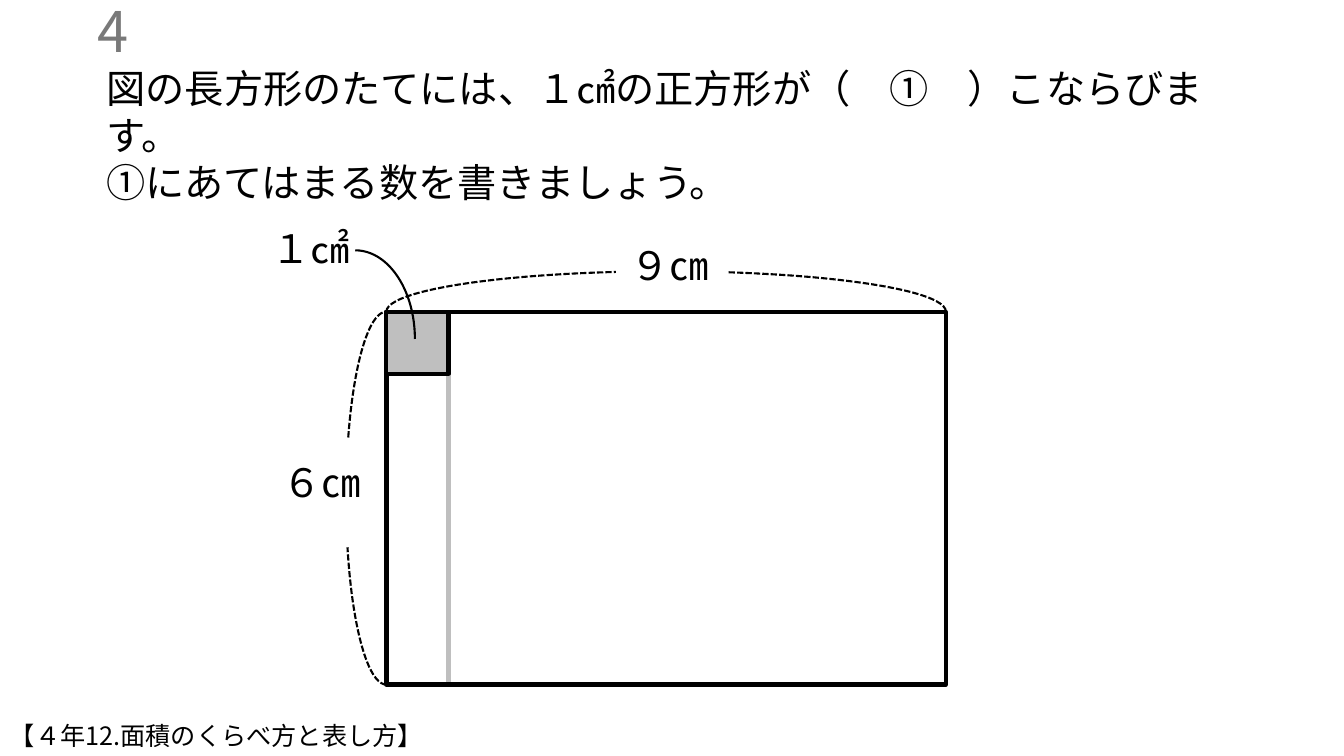
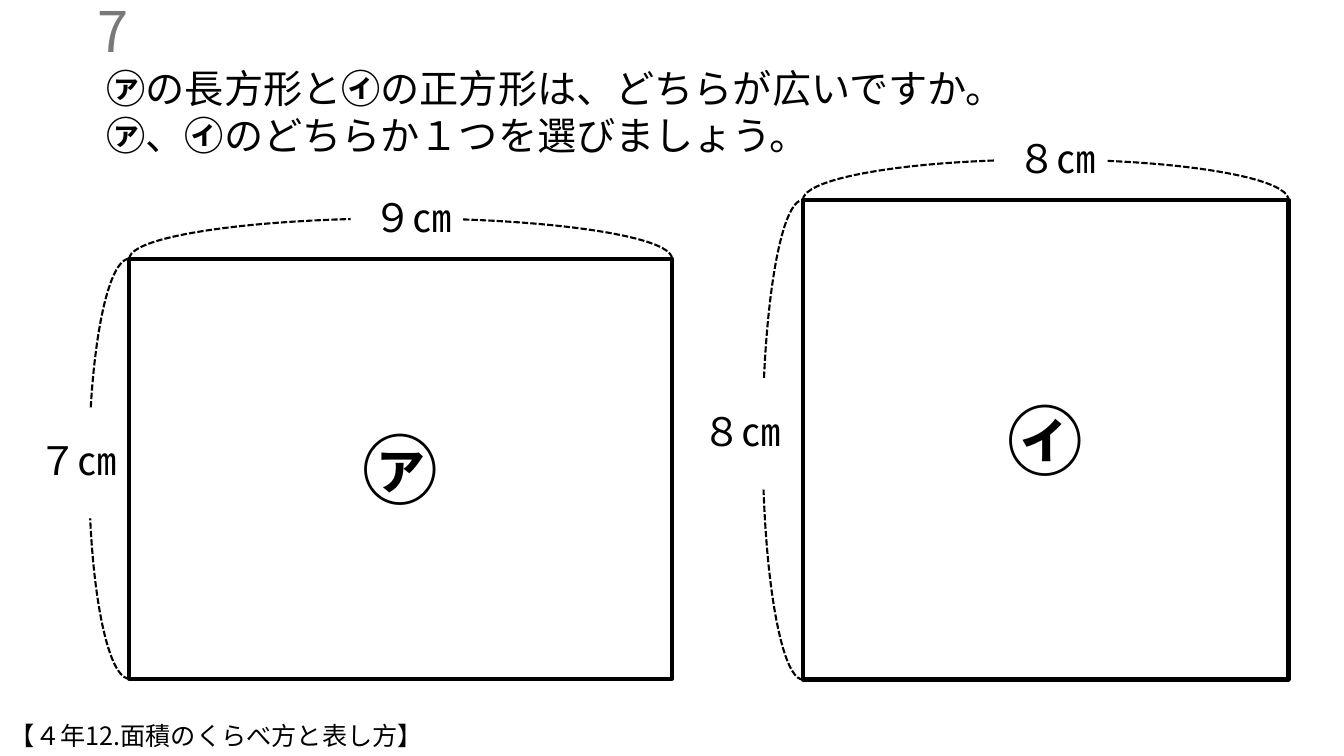
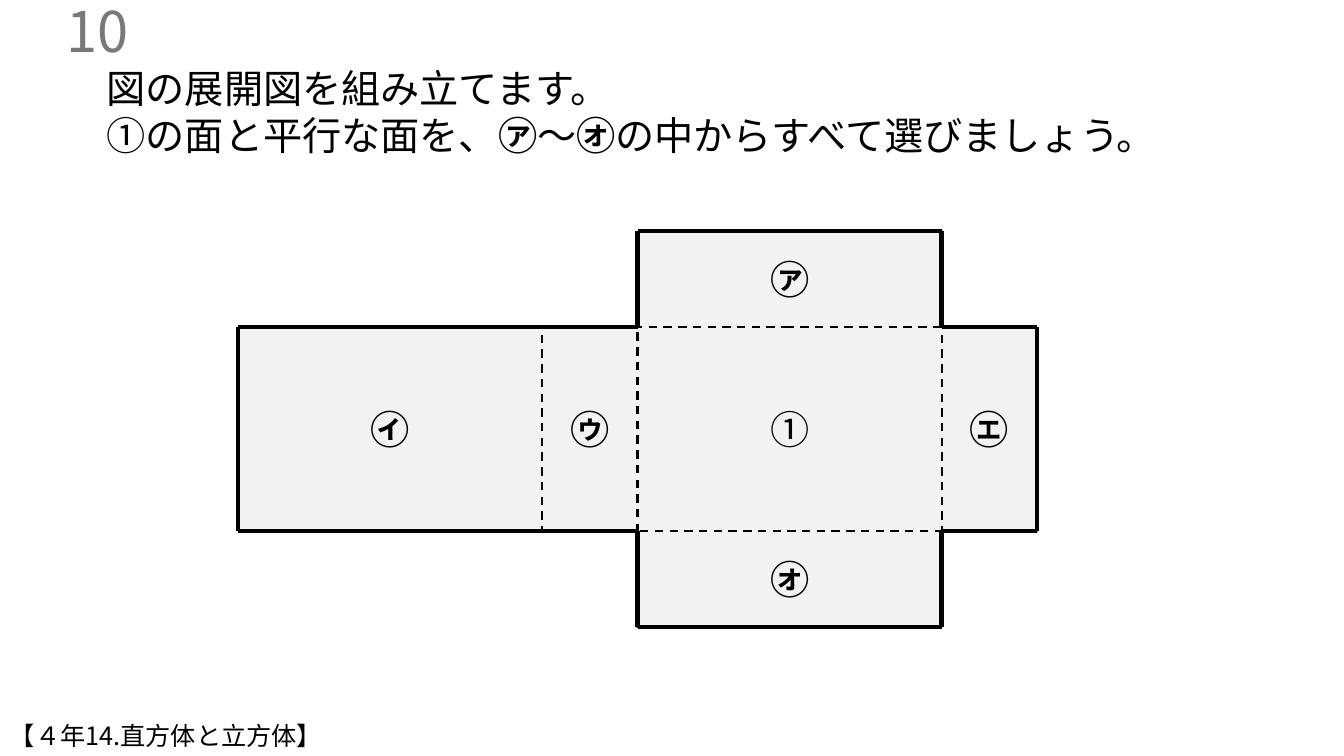
import itertools

import pptx
import pptx.dml.color
import pptx.enum.dml
import pptx.enum.shapes
import pptx.enum.text
import pptx.oxml
import pptx.oxml.ns
import pptx.util

BLACK = pptx.dml.color.RGBColor(0x00, 0x00, 0x00)
NUMBER_GRAY = pptx.dml.color.RGBColor(0x79, 0x79, 0x79)
UNIT_GRAY = pptx.dml.color.RGBColor(0xBF, 0xBF, 0xBF)
FACE_GRAY = pptx.dml.color.RGBColor(0xF2, 0xF2, 0xF2)

FONT = "Noto Sans CJK JP"
BOLD_SIGNS = "㋐㋑㋒㋓㋔"

# Square grid: 80 columns by 45 rows, six cells to the inch
COLUMNS, ROWS = 80, 45
CELL = pptx.util.Inches(7.5) / ROWS

ALIGN = pptx.enum.text.PP_ALIGN
MIDDLE = pptx.enum.text.MSO_ANCHOR.MIDDLE
SHAPE = pptx.enum.shapes.MSO_SHAPE
DASH = pptx.enum.dml.MSO_LINE

BODY = {"size": pptx.util.Pt(28), "name": FONT}
NUMBER = {"size": pptx.util.Pt(40), "name": FONT}
FOOTER = {"size": pptx.util.Pt(18), "name": FONT}
SIGN = {"size": pptx.util.Pt(54), "name": FONT}

THICK = {"width": pptx.util.Pt(3)}
THIN = {"width": pptx.util.Pt(1.5)}
BRACKET = {**THIN, "dash_style": DASH.SQUARE_DOT}
FOLD = {**THIN, "dash_style": DASH.DASH}

# Arc adjustments: the full turn is 216, so half a turn is 108
HALF_TURN = 108
BRACKET_ARCS = ((196.71, 0), (HALF_TURN, 131))
BRACKET_DEPTH = 4.8
LABEL_SIZE = (7.1, 3.4)


def grid(*cells):
    return [round(cell * CELL) for cell in cells]


def apply(target, values):
    for name, value in values.items():
        setattr(target, name, value)


def write(frame, lines, style, color=BLACK, align=ALIGN.LEFT, anchor=None):
    """Fill a text frame; circled kana are set in bold."""
    apply(frame, {"word_wrap": True, "vertical_anchor": anchor})
    for index, line in enumerate(lines):
        paragraph = frame.add_paragraph() if index else frame.paragraphs[0]
        paragraph.alignment = align
        for bold, letters in itertools.groupby(line, lambda sign: sign in BOLD_SIGNS):
            run = paragraph.add_run()
            run.text = "".join(letters)
            apply(run.font, {**style, "bold": bold})
            run.font.color.rgb = color
            # East Asian typeface
            typeface = pptx.oxml.parse_xml(
                f'<a:ea {pptx.oxml.ns.nsdecls("a")} typeface="{FONT}"/>')
            run.font._element.find(pptx.oxml.ns.qn("a:latin")).addnext(typeface)


def text(slide, box, lines, style, **options):
    write(slide.shapes.add_textbox(*grid(*box)).text_frame, lines, style, **options)


def outline(line, values, color=BLACK):
    line.color.rgb = color
    apply(line, values)


def shape(slide, kind, box, line=None, fill=None):
    item = slide.shapes.add_shape(kind, *grid(*box))
    item.shadow.inherit = False
    if fill is None:
        item.fill.background()
    else:
        item.fill.solid()
        item.fill.fore_color.rgb = fill
    if line is None:
        item.line.fill.background()
    else:
        outline(item.line, line)
    return item


def straight(slide, start, end, color=BLACK):
    line = slide.shapes.add_connector(
        pptx.enum.shapes.MSO_CONNECTOR.STRAIGHT, *grid(*start, *end))
    line._element.spPr.append(
        pptx.oxml.parse_xml(f'<a:effectLst {pptx.oxml.ns.nsdecls("a")}/>'))
    outline(line.line, THICK, color)


def question_slide(deck, number, question, unit):
    """Number, question and footer shared by every slide."""
    slide = deck.slides.add_slide(deck.slide_layouts[6])
    text(slide, (0, 0.6, 8.22, 2.4), [number], NUMBER,
         color=NUMBER_GRAY, align=ALIGN.RIGHT, anchor=MIDDLE)
    text(slide, (5.76, 3.54, 68.1, 6.24), question, BODY)
    text(slide, (0, 42.6, 45, 2.4), [unit], FOOTER)
    return slide


def bracket(slide, center, length, rotation=0):
    """Two dashed arcs with a gap for the length."""
    x, y = center
    box = (x - length / 2, y - BRACKET_DEPTH / 2, length, BRACKET_DEPTH)
    for start, end in BRACKET_ARCS:
        arc = shape(slide, SHAPE.ARC, box, BRACKET)
        arc.rotation = rotation
        arc.adjustments[0], arc.adjustments[1] = start, end


def measured_rectangle(slide, box, across, down, sign=""):
    """Rectangle with bracketed lengths above it and on its left.

    Each length is its text and the label's offset from the middle of the side.
    """
    x, y, width, height = box
    rectangle = shape(slide, SHAPE.RECTANGLE, box, THICK)
    if sign:
        write(rectangle.text_frame, [sign], SIGN, align=ALIGN.CENTER, anchor=MIDDLE)
    sides = (((x + width / 2, y), width, 0, across),
             ((x, y + height / 2), height, 270, down))
    for center, length, rotation, (label, right, below) in sides:
        bracket(slide, center, length, rotation)
        text(slide, (center[0] + right, center[1] + below, *LABEL_SIZE), [label], BODY)


def unit_square_figure(slide, x, y, unit):
    """Rectangle of 9 by 6 units with one unit square in its corner."""
    width, height = 9 * unit, 6 * unit
    straight(slide, (x + unit, y), (x + unit, y + height), UNIT_GRAY)
    measured_rectangle(slide, (x, y, width, height),
                       ("９㎝", -2.7, -4.5), ("６㎝", -6.8, -2.65))
    shape(slide, SHAPE.RECTANGLE, (x, y, unit, unit), THICK, UNIT_GRAY)
    # Callout to the unit square
    text(slide, (x - 7.45, y - 5.5, *LABEL_SIZE), ["１㎠"], BODY)
    shape(slide, SHAPE.ARC, (x - 5.4, y - 3.65, 7.1, 10.56), THIN)


def box_net(slide, x, y, long, tall, depth):
    """Net of a box: a row of four faces, one flap above and one below."""
    x1, x2, x3, x4, x5 = itertools.accumulate((x, long, depth, long, depth))
    y1, y2, y3, y4 = itertools.accumulate((y, depth, tall, depth))
    faces = (
        ("①", (x3, y2, long, tall), None),
        ("㋓", (x4, y2, depth, tall), FOLD),
        ("㋑", (x1, y2, long, tall), None),
        ("㋒", (x2, y2, depth, tall), FOLD),
        ("㋐", (x3, y1, long, depth), FOLD),
        ("㋔", (x3, y3, long, depth), FOLD),
    )
    for sign, box, line in faces:
        face = shape(slide, SHAPE.RECTANGLE, box, line, FACE_GRAY)
        write(face.text_frame, [sign], BODY, align=ALIGN.CENTER, anchor=MIDDLE)
    # Outer edge
    corners = ((x1, y2), (x3, y2), (x3, y1), (x4, y1), (x4, y2), (x5, y2),
               (x5, y3), (x4, y3), (x4, y4), (x3, y4), (x3, y3), (x1, y3))
    for start, end in zip(corners, corners[1:] + corners[:1]):
        straight(slide, start, end)


def main():
    deck = pptx.Presentation()
    deck.slide_width, deck.slide_height = grid(COLUMNS, ROWS)
    area_unit = "【４年12.面積のくらべ方と表し方】"

    counting = question_slide(deck, "4", [
        "図の長方形のたてには、１㎠の正方形が（　①　）こならびます。",
        "①にあてはまる数を書きましょう。"], area_unit)
    unit_square_figure(counting, 23, 18.55, 3.7)

    comparing = question_slide(deck, "7", [
        "㋐の長方形と㋑の正方形は、どちらが広いですか。",
        "㋐、㋑のどちらか１つを選びましょう。"], area_unit)
    measured_rectangle(comparing, (7.7, 15.4, 32.3, 25),
                       ("９㎝", -2.2, -4.2), ("７㎝", -6, -2.25), "㋐")
    measured_rectangle(comparing, (47.8, 11.9, 28.9, 28.55),
                       ("８㎝", -2.3, -4.2), ("８㎝", -6.6, -2.25), "㋑")

    folding = question_slide(deck, "10", [
        "図の展開図を組み立てます。",
        "①の面と平行な面を、㋐～㋔の中からすべて選びましょう。"],
        "【４年14.直方体と立方体】")
    box_net(folding, 14.15, 13.75, long=18.1, tall=12.15, depth=5.7)

    deck.save("out.pptx")


if __name__ == "__main__":
    main()
